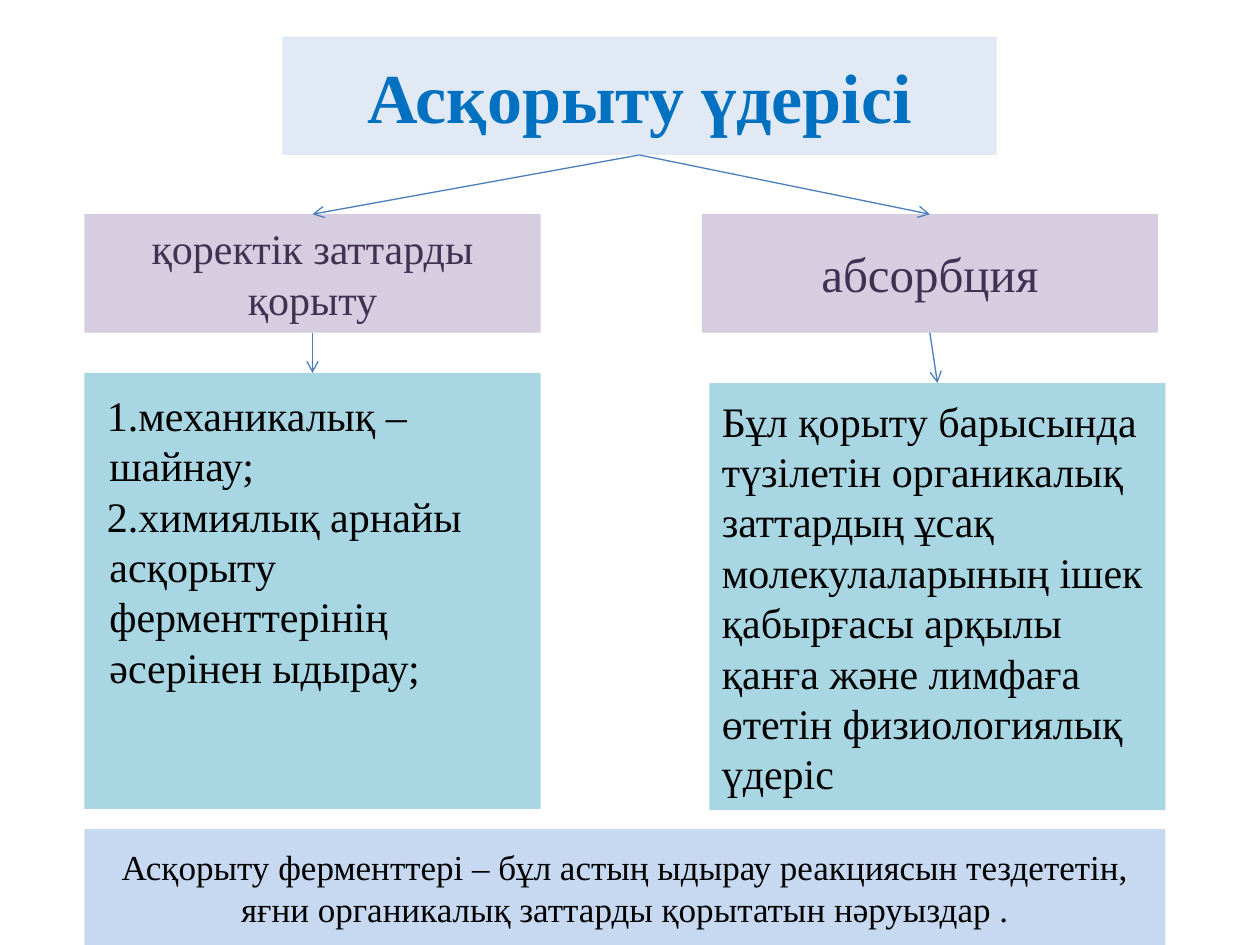
"""Build a one-slide diagram of the digestion process."""
from dataclasses import dataclass
from typing import Optional

import pptx
import pptx.dml.color
import pptx.enum.shapes
import pptx.enum.text
import pptx.oxml
import pptx.oxml.ns
import pptx.util

Inches = pptx.util.Inches
RGB = pptx.dml.color.RGBColor.from_string
qn = pptx.oxml.ns.qn
ALIGN = pptx.enum.text.PP_ALIGN


@dataclass(frozen=True)
class Theme:
    font: str = "Times New Roman"
    title_fill: str = "DCE6F2"
    title_text: str = "0070C0"
    branch_fill: str = "CCC1DA"
    branch_text: str = "403152"
    detail_fill: str = "93CDDD"
    footer_fill: str = "C6D9F1"
    body_text: str = "000000"
    arrow: str = "4B7EBC"
    arrow_pt: float = 0.75
    title_pt: int = 40
    large_pt: int = 28
    body_pt: int = 24
    footer_pt: int = 20


T = Theme()


@dataclass(frozen=True)
class Box:
    left: float
    top: float
    width: float
    height: float
    lines: tuple[str, ...]
    fill: str
    color: str = T.body_text
    size: int = T.body_pt
    alpha: Optional[int] = 80
    align: ALIGN = ALIGN.CENTER
    bold: bool = False
    numbered: bool = False
    bottom_inset: float = 0.05

    @property
    def top_mid(self) -> tuple[float, float]:
        return self.left + self.width / 2, self.top

    @property
    def bottom_mid(self) -> tuple[float, float]:
        return self.left + self.width / 2, self.top + self.height


TITLE = Box(2.24, 0.29, 5.67, 0.94, ("Асқорыту үдерісі",), T.title_fill,
            T.title_text, T.title_pt, alpha=83, bold=True)
DIGESTION = Box(0.67, 1.7, 3.62, 0.94, ("қоректік заттарды қорыту",),
                T.branch_fill, T.branch_text)
ABSORPTION = Box(5.57, 1.7, 3.62, 0.94, ("абсорбция",),
                 T.branch_fill, T.branch_text, T.large_pt)
STAGES = Box(0.67, 2.96, 3.62, 3.46,
             ("механикалық – шайнау;",
              "химиялық арнайы асқорыту ферменттерінің әсерінен ыдырау;"),
             T.detail_fill, align=ALIGN.LEFT, numbered=True, bottom_inset=0.85)
UPTAKE = Box(5.63, 3.04, 3.62, 3.39,
             ("Бұл қорыту барысында түзілетін органикалық заттардың ұсақ "
              "молекулаларының ішек қабырғасы арқылы қанға және лимфаға "
              "өтетін физиологиялық үдеріс",),
             T.detail_fill, align=ALIGN.LEFT)
FOOTER = Box(0.67, 6.58, 8.58, 0.92,
             ("Асқорыту ферменттері – бұл астың ыдырау реакциясын тездететін, "
              "яғни органикалық заттарды қорытатын нәруыздар .",),
             T.footer_fill, size=T.footer_pt, alpha=None)


def set_attrs(target: object, values: dict) -> None:
    """Set every named attribute on the target."""
    for name, value in values.items():
        setattr(target, name, value)


def number(p) -> None:
    """Give a paragraph automatic numbering with a tight hanging indent."""
    pPr = p._p.get_or_add_pPr()
    pPr.set("marL", str(Inches(0.1)))
    pPr.set("indent", str(Inches(-0.02)))
    bullet = pPr.makeelement(qn("a:buAutoNum"), {"type": "arabicPeriod"})
    pPr.append(bullet)


def format_box(sp, box: Box) -> None:
    """Place a shape, fill it and write its text."""
    set_attrs(sp, {name: Inches(getattr(box, name))
                   for name in ("left", "top", "width", "height")})
    sp.fill.solid()
    sp.fill.fore_color.rgb = RGB(box.fill)
    if box.alpha is not None:
        color = sp.element.spPr.find(".//" + qn("a:srgbClr"))
        color.append(color.makeelement(qn("a:alpha"), {"val": str(box.alpha * 1000)}))
    sp.line.fill.background()
    tf = sp.text_frame
    set_attrs(tf, {
        "word_wrap": True,
        "auto_size": pptx.enum.text.MSO_AUTO_SIZE.NONE,
        "vertical_anchor": pptx.enum.text.MSO_ANCHOR.MIDDLE,
        "margin_bottom": Inches(box.bottom_inset),
    })
    for i, line in enumerate(box.lines):
        p = tf.add_paragraph() if i else tf.paragraphs[0]
        p.alignment = box.align
        if box.numbered:
            number(p)
        r = p.add_run()
        r.text = line
        set_attrs(r.font, {"name": T.font, "size": pptx.util.Pt(box.size),
                           "bold": box.bold})
        r.font.color.rgb = RGB(box.color)


def add_box(s, box: Box) -> None:
    """Add a rectangle described by a box."""
    sp = s.shapes.add_shape(pptx.enum.shapes.MSO_SHAPE.RECTANGLE, 0, 0, 0, 0)
    sp.shadow.inherit = False
    format_box(sp, box)


def add_arrow(s, source: Box, target: Box) -> None:
    """Add an arrow from the bottom of one box to the top of another."""
    x1, y1 = source.bottom_mid
    x2, y2 = target.top_mid
    c = s.shapes.add_connector(pptx.enum.shapes.MSO_CONNECTOR.STRAIGHT,
                               Inches(x1), Inches(y1), Inches(x2), Inches(y2))
    c.line.color.rgb = RGB(T.arrow)
    c.line.width = pptx.util.Pt(T.arrow_pt)
    spPr = c.element.spPr
    ln = spPr.find(qn("a:ln"))
    ln.append(ln.makeelement(qn("a:tailEnd"), {"type": "arrow"}))
    spPr.append(spPr.makeelement(qn("a:effectLst"), {}))


def main() -> None:
    """Build and save the slide."""
    prs = pptx.Presentation()
    set_attrs(prs, {"slide_width": Inches(10), "slide_height": Inches(7.5)})
    s = prs.slides.add_slide(prs.slide_layouts[5])
    format_box(s.shapes.title, TITLE)
    for box in (DIGESTION, STAGES, ABSORPTION, UPTAKE, FOOTER):
        add_box(s, box)
    for source, target in ((TITLE, DIGESTION), (TITLE, ABSORPTION),
                           (DIGESTION, STAGES), (ABSORPTION, UPTAKE)):
        add_arrow(s, source, target)
    prs.save("out.pptx")


if __name__ == "__main__":
    main()
